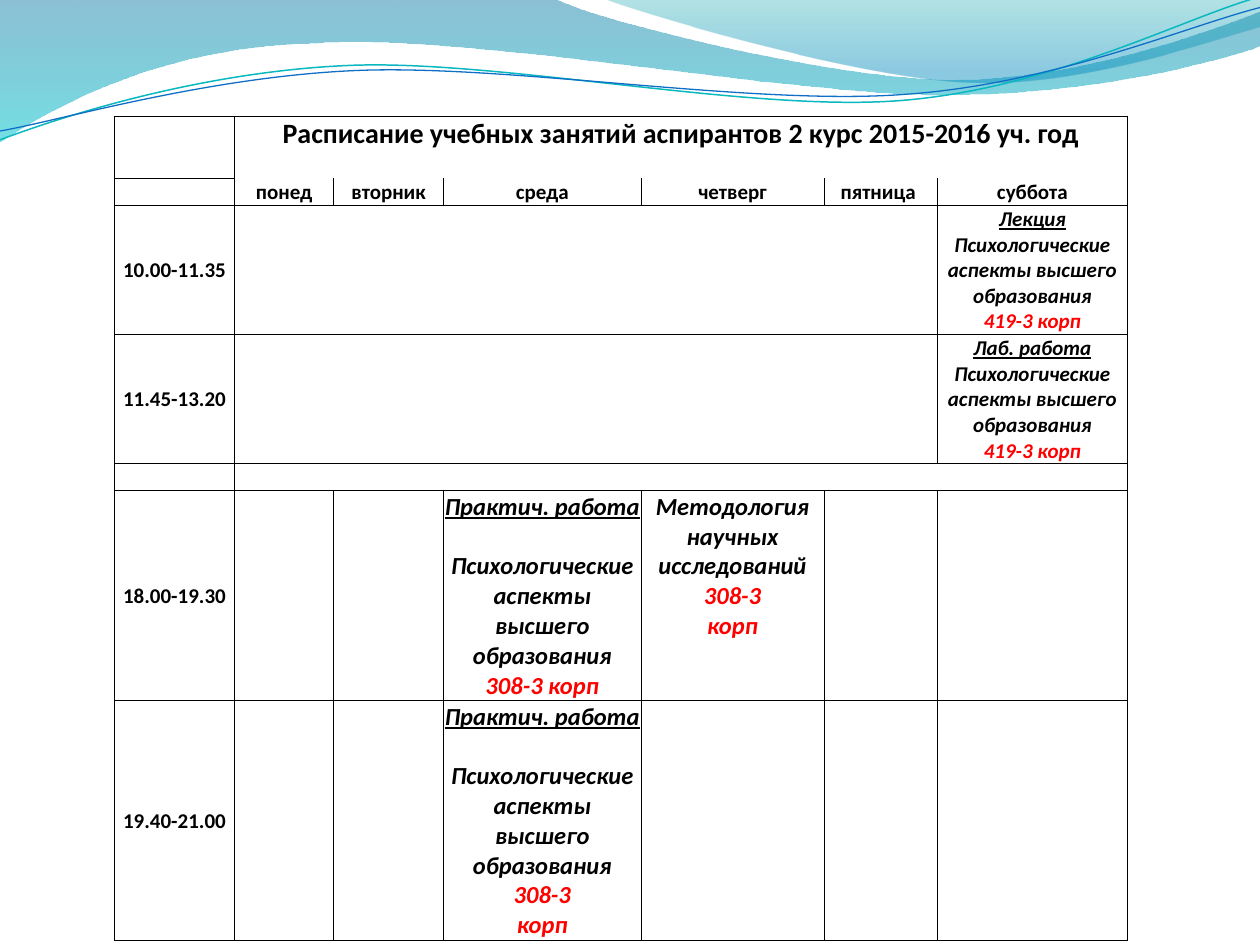
from lxml import etree
from pptx import Presentation
from pptx.dml.color import RGBColor
from pptx.enum.text import MSO_ANCHOR, PP_ALIGN
from pptx.oxml.ns import qn
from pptx.util import Inches, Pt

CENTER = PP_ALIGN.CENTER
TOP, MIDDLE, BOTTOM = MSO_ANCHOR.TOP, MSO_ANCHOR.MIDDLE, MSO_ANCHOR.BOTTOM
BLACK, RED = "000000", "FF0000"
FONT = "Calibri"

BANDS = [
    ([[(0, 0)], [(4.4, -0.01)],
      [(4.76, 0.17), (6.64, 0.63), (7.58, 0.63)],
      [(8.53, 0.63), (9.58, 0.26), (10, 0.09)], [(10.01, 0.36)],
      [(9.83, 0.44), (8.7, 0.76), (7.46, 0.75)],
      [(6.22, 0.75), (3.82, 0.28), (2.57, 0.34)],
      [(1.29, 0.36), (0.46, 0.83), (-0.01, 1.13)], [(0, 0)]],
     [(0, "0074A1", 45), (1, "00C6CF", 55)]),
    ([[(4.79, -0.01)],
      [(5.09, 0.11), (6.82, 0.62), (7.69, 0.65)],
      [(8.56, 0.69), (9.61, 0.32), (10, 0.21)], [(10, 0)], [(4.79, -0.01)]],
     [(0, "00A1A9", 30), (0.8, "008BBF", 45)]),
]
WAVES = [
    ([[(0, 1.11)],
      [(0.48, 0.93), (1.58, 0.57), (2.77, 0.52)],
      [(3.95, 0.47), (5.93, 0.89), (7.13, 0.8)],
      [(8.33, 0.71), (9.38, 0.15), (9.98, -0.02)]], "0AB8BF", 0.85),
    ([[(0, 1.04)],
      [(0.47, 0.96), (1.64, 0.61), (2.83, 0.56)],
      [(4.03, 0.51), (5.97, 0.84), (7.17, 0.75)],
      [(8.36, 0.67), (9.41, 0.21), (10, 0.06)]], "0F6FC6", 0.75),
]

COLUMNS = [0.95, 0.79, 0.87, 1.57, 1.45, 0.9, 1.51]
ROWS = [0.21, 0.21, 0.21, 0.63, 0.71, 0.21, 1.28, 1.34]
TITLE = "Расписание учебных занятий аспирантов 2 курс 2015-2016 уч. год"
DAYS = ["понед", "вторник", "среда", "четверг", "пятница ", "суббота"]
TIMES = {3: "10.00-11.35", 4: "11.45-13.20", 6: "18.00-19.30", 7: "19.40-21.00"}
UNDERLINED, IN_RED = {"underline": True}, {"color": RED}
SUBJECT = ("Психологические аспекты высшего образования", {})
LECTURE_ROOM = ("419-3 корп", IN_RED)
SPLIT_ROOM = [("308-3", IN_RED), ("корп", IN_RED)]
PRACTICE = [("Практич. работа", UNDERLINED)]
CLASSES = {
    (3, 6): (12, [[("Лекция", UNDERLINED), SUBJECT, LECTURE_ROOM]]),
    (4, 6): (12, [[("Лаб. работа", UNDERLINED), SUBJECT, LECTURE_ROOM]]),
    (6, 3): (14, [PRACTICE, [SUBJECT, ("308-3 корп", IN_RED)]]),
    (6, 4): (14, [[("Методология научных исследований", {})] + SPLIT_ROOM]),
    (7, 3): (14, [PRACTICE, [SUBJECT] + SPLIT_ROOM]),
}


def rgb(value):
    """Turn a hex string into a colour."""
    return RGBColor.from_string(value)


def write(para, text, size=12, color=BLACK, italic=False, underline=False):
    """Add a bold line of text to a paragraph."""
    if para.runs:
        para.add_line_break()
        etree.SubElement(para._p[-1], qn("a:rPr"), sz=str(size * 100))
    span = para.add_run()
    span.text = text
    font = span.font
    font.name, font.size, font.bold = FONT, Pt(size), True
    font.italic, font.underline = italic, underline
    font.color.rgb = rgb(color)


def add_outline(page, outline, close):
    """Draw an outline of lines and cubic curves without shadow."""
    points = [(Inches(x), Inches(y)) for segment in outline for x, y in segment]
    builder = page.shapes.build_freeform(*points[0])
    builder.add_line_segments(points[1:], close=close)
    shape = builder.convert_to_shape()
    shape.shadow.inherit = False
    lines = iter(list(shape._element.iter(qn("a:lnTo"))))
    for segment in outline[1:]:
        parts = [next(lines) for _ in segment]
        if len(parts) == 3:
            curve = etree.Element(qn("a:cubicBezTo"))
            parts[0].addprevious(curve)
            for part in parts:
                curve.append(part[0])
                part.getparent().remove(part)
    return shape


def add_band(page, outline, stops):
    """Draw a band with a translucent downward gradient."""
    shape = add_outline(page, outline, True)
    shape.line.fill.background()
    shape.fill.gradient()
    shape.fill.gradient_angle = 270
    for stop, (position, color, _) in zip(shape.fill.gradient_stops, stops):
        stop.position = position
        stop.color.rgb = rgb(color)
    for color, (_, _, opacity) in zip(shape._element.iter(qn("a:srgbClr")), stops):
        etree.SubElement(color, qn("a:alpha"), val=str(opacity * 1000))


def add_wave(page, outline, color, width):
    """Draw a thin open curve."""
    shape = add_outline(page, outline, False)
    shape.fill.background()
    shape.line.color.rgb = rgb(color)
    shape.line.width = Pt(width)


def open_right(row, column):
    """Tell whether a cell has no line on its right."""
    return row in (3, 4) and 1 <= column <= 4 or row == 5 and 1 <= column <= 5


def open_bottom(row, column):
    """Tell whether a cell has no line below it."""
    return row == 0 or row == 1 and column > 0


def format_cell(cell, row, column):
    """Set the margins, borders and empty fill of a cell."""
    cell.margin_left = cell.margin_right = cell.margin_top = Inches(0.01)
    cell.margin_bottom = 0
    hidden = {"L": open_right(row, column - 1), "R": open_right(row, column),
              "T": row > 0 and open_bottom(row - 1, column), "B": open_bottom(row, column)}
    properties = cell._tc.get_or_add_tcPr()
    for side, is_hidden in hidden.items():
        line = etree.SubElement(properties, qn("a:ln" + side), w=str(Pt(0.5)))
        if is_hidden:
            etree.SubElement(line, qn("a:noFill"))
        else:
            fill = etree.SubElement(line, qn("a:solidFill"))
            etree.SubElement(fill, qn("a:srgbClr"), val=BLACK)
    cell.fill.background()


def fill_cell(cell, paragraphs, anchor=TOP, **style):
    """Fill a cell with centred paragraphs, a line apart."""
    cell.vertical_anchor = anchor
    frame = cell.text_frame
    for index, lines in enumerate(paragraphs):
        para = frame.add_paragraph() if index else frame.paragraphs[0]
        para.alignment = CENTER
        if index:
            para.space_before = Pt(17)
        for text, own in lines:
            write(para, text, **style, **own)


def add_timetable(page):
    """Build the timetable."""
    table = page.shapes.add_table(len(ROWS), len(COLUMNS), Inches(0.91), Inches(0.92),
                                  Inches(sum(COLUMNS)), Inches(sum(ROWS))).table
    table.first_row = table.horz_banding = False
    for column, width in zip(table.columns, COLUMNS):
        column.width = Inches(width)
    for row, height in zip(table.rows, ROWS):
        row.height = Inches(height)

    content = {(0, 1): ([[(TITLE, {})]], TOP, {"size": 16})}
    content.update({(2, i): ([[(day, {})]], BOTTOM, {}) for i, day in enumerate(DAYS, 1)})
    content.update({(row, 0): ([[(time, {})]], MIDDLE, {}) for row, time in TIMES.items()})
    content.update({place: (paragraphs, TOP, {"size": size, "italic": True})
                    for place, (size, paragraphs) in CLASSES.items()})

    for row in range(len(ROWS)):
        for column in range(len(COLUMNS)):
            cell = table.cell(row, column)
            format_cell(cell, row, column)
            if (row, column) in content:
                paragraphs, anchor, style = content[row, column]
                fill_cell(cell, paragraphs, anchor, **style)
            else:
                para = cell.text_frame.paragraphs[0]
                etree.SubElement(para._p, qn("a:endParaRPr"), sz="1200")
    table.cell(0, 1).merge(table.cell(1, 6))


def main():
    """Build and save the slide."""
    deck = Presentation()
    deck.slide_width, deck.slide_height = Inches(10), Inches(7.5)
    page = deck.slides.add_slide(deck.slide_layouts[6])
    for band in BANDS:
        add_band(page, *band)
    for wave in WAVES:
        add_wave(page, *wave)
    add_timetable(page)
    deck.save("out.pptx")


if __name__ == "__main__":
    main()
